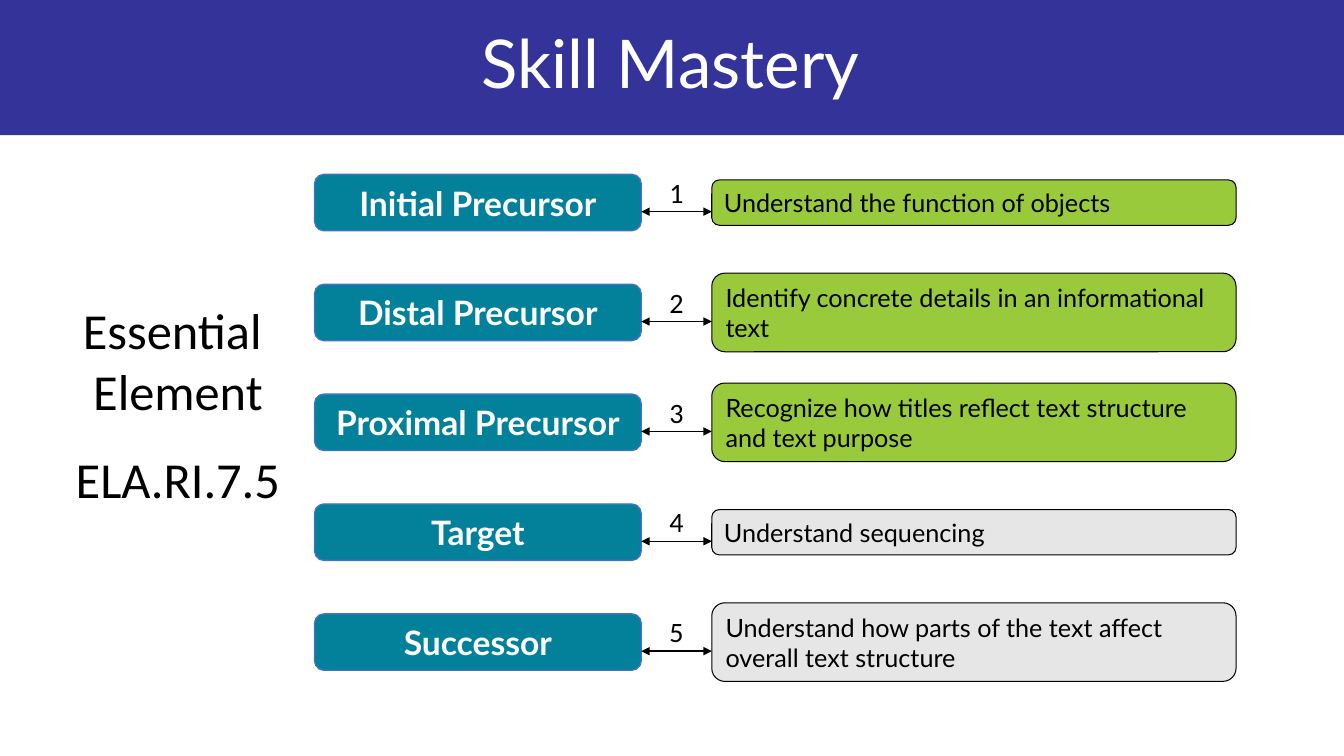
from lxml import etree
from pptx import Presentation
from pptx.dml.color import RGBColor
from pptx.enum.shapes import MSO_CONNECTOR, MSO_SHAPE
from pptx.enum.text import MSO_ANCHOR, PP_ALIGN
from pptx.oxml.ns import qn
from pptx.util import Inches, Pt

RECTANGLE = MSO_SHAPE.RECTANGLE
ROUNDED = MSO_SHAPE.ROUNDED_RECTANGLE
STRAIGHT = MSO_CONNECTOR.STRAIGHT
TOP, MIDDLE = MSO_ANCHOR.TOP, MSO_ANCHOR.MIDDLE
LEFT, CENTER = PP_ALIGN.LEFT, PP_ALIGN.CENTER

COLORS = {
    "band": "333399",
    "level": "03819B",
    "level_line": "4472C4",
    "mastered": "99CA3C",
    "not_mastered": "E7E6E6",
    "black": "000000",
    "white": "FFFFFF",
}

LEVELS = [
    ("Initial Precursor", "Understand the function of objects", 0.45, "mastered"),
    ("Distal Precursor", "Identify concrete details in an informational text", 0.78, "mastered"),
    ("Proximal Precursor", "Recognize how titles reflect text structure and text purpose", 0.78, "mastered"),
    ("Target", "Understand sequencing", 0.45, "not_mastered"),
    ("Successor", "Understand how parts of the text affect overall text structure", 0.78, "not_mastered"),
]
FIRST_CENTER, ROW_PITCH = 2.01, 1.09
LEVEL_LEFT, LEVEL_WIDTH, LEVEL_HEIGHT = 3.12, 3.24, 0.56
SKILL_LEFT, SKILL_WIDTH = 7.06, 5.2
LEVEL_RIGHT = LEVEL_LEFT + LEVEL_WIDTH
GAP = SKILL_LEFT - LEVEL_RIGHT


class SlideBuilder:
    """Draws styled elements on one slide."""

    def __init__(self, slide):
        self.slide = slide

    def color(self, name):
        return RGBColor.from_string(COLORS[name])

    def set_text(self, shape, lines, size, font="Lato", color="black", bold=False,
                 align=CENTER, anchor=MIDDLE, wrap=True):
        frame = shape.text_frame
        frame.word_wrap = wrap
        frame.vertical_anchor = anchor
        frame.text = "\n".join(lines)
        for paragraph in frame.paragraphs:
            paragraph.alignment = align
            paragraph.font.name = font
            paragraph.font.size = Pt(size)
            paragraph.font.bold = bold
            paragraph.font.color.rgb = self.color(color)
        return frame.paragraphs

    def box(self, kind, left, top, width, height, fill, line=None, line_width=1):
        shape = self.slide.shapes.add_shape(
            kind, Inches(left), Inches(top), Inches(width), Inches(height))
        shape.shadow.inherit = False
        shape.fill.solid()
        shape.fill.fore_color.rgb = self.color(fill)
        if line:
            shape.line.color.rgb = self.color(line)
            shape.line.width = Pt(line_width)
        else:
            shape.line.fill.background()
        return shape

    def text(self, left, top, width, height, lines, size, **style):
        shape = self.slide.shapes.add_textbox(
            Inches(left), Inches(top), Inches(width), Inches(height))
        return self.set_text(shape, lines, size, **style)

    def double_arrow(self, left, right, y):
        connector = self.slide.shapes.add_connector(
            STRAIGHT, Inches(left), Inches(y), Inches(right), Inches(y))
        connector.line.color.rgb = self.color("black")
        connector.line.width = Pt(1)
        properties = connector._element.spPr
        outline = properties.find(qn("a:ln"))
        for end in ("a:headEnd", "a:tailEnd"):
            etree.SubElement(outline, qn(end), type="triangle")
        etree.SubElement(properties, qn("a:effectLst"))


def main():
    presentation = Presentation()
    presentation.slide_width = Inches(13.33)
    presentation.slide_height = Inches(7.5)
    builder = SlideBuilder(presentation.slides.add_slide(presentation.slide_layouts[6]))

    builder.box(RECTANGLE, 0, 0, 13.33, 1.34, "band")
    title = builder.text(0.9, 0, 11.5, 1.33, ["Skill Mastery"], 48, color="white")
    title[0].line_spacing = 0.9

    element = builder.text(0.64, 2.92, 2.25, 2.26, ["Essential ", "Element", "ELA.RI.7.5"],
                           36, font="Calibri", anchor=TOP, wrap=False)
    element[-1].space_before = Pt(20)

    for index, (level, skill, height, status) in enumerate(LEVELS):
        center = FIRST_CENTER + index * ROW_PITCH
        level_box = builder.box(ROUNDED, LEVEL_LEFT, center - LEVEL_HEIGHT / 2,
                                LEVEL_WIDTH, LEVEL_HEIGHT, "level", "level_line")
        builder.set_text(level_box, [level], 24, color="white", bold=True)
        skill_box = builder.box(ROUNDED, SKILL_LEFT, center - height / 2,
                                SKILL_WIDTH, height, status, "black", 0.75)
        builder.set_text(skill_box, [skill], 18, align=LEFT)
        builder.text(LEVEL_RIGHT, center - 0.32, GAP, 0.44, [str(index + 1)], 20,
                     font="Calibri", anchor=TOP)
        builder.double_arrow(LEVEL_RIGHT, SKILL_LEFT, center + 0.09)

    presentation.save("out.pptx")


if __name__ == "__main__":
    main()
